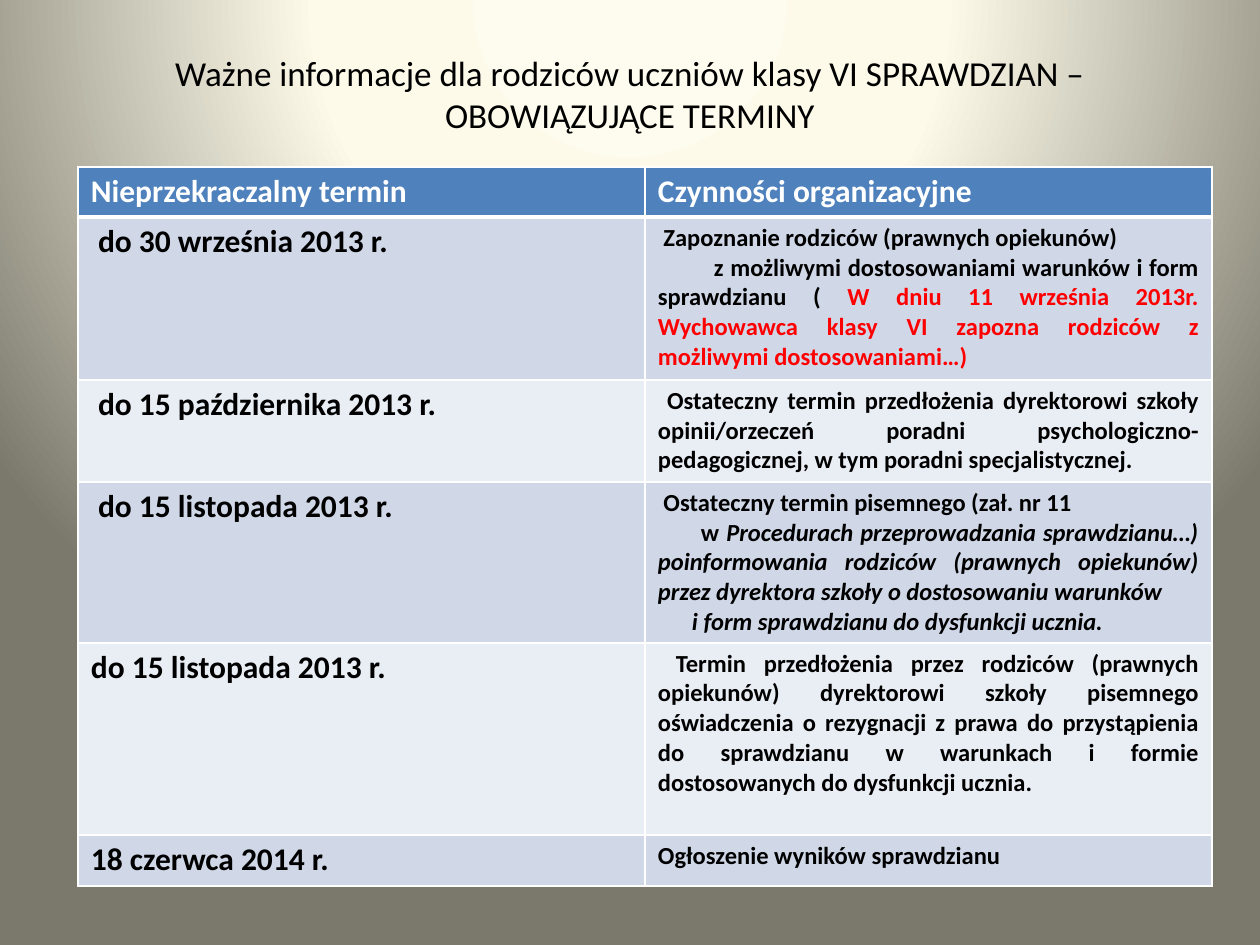
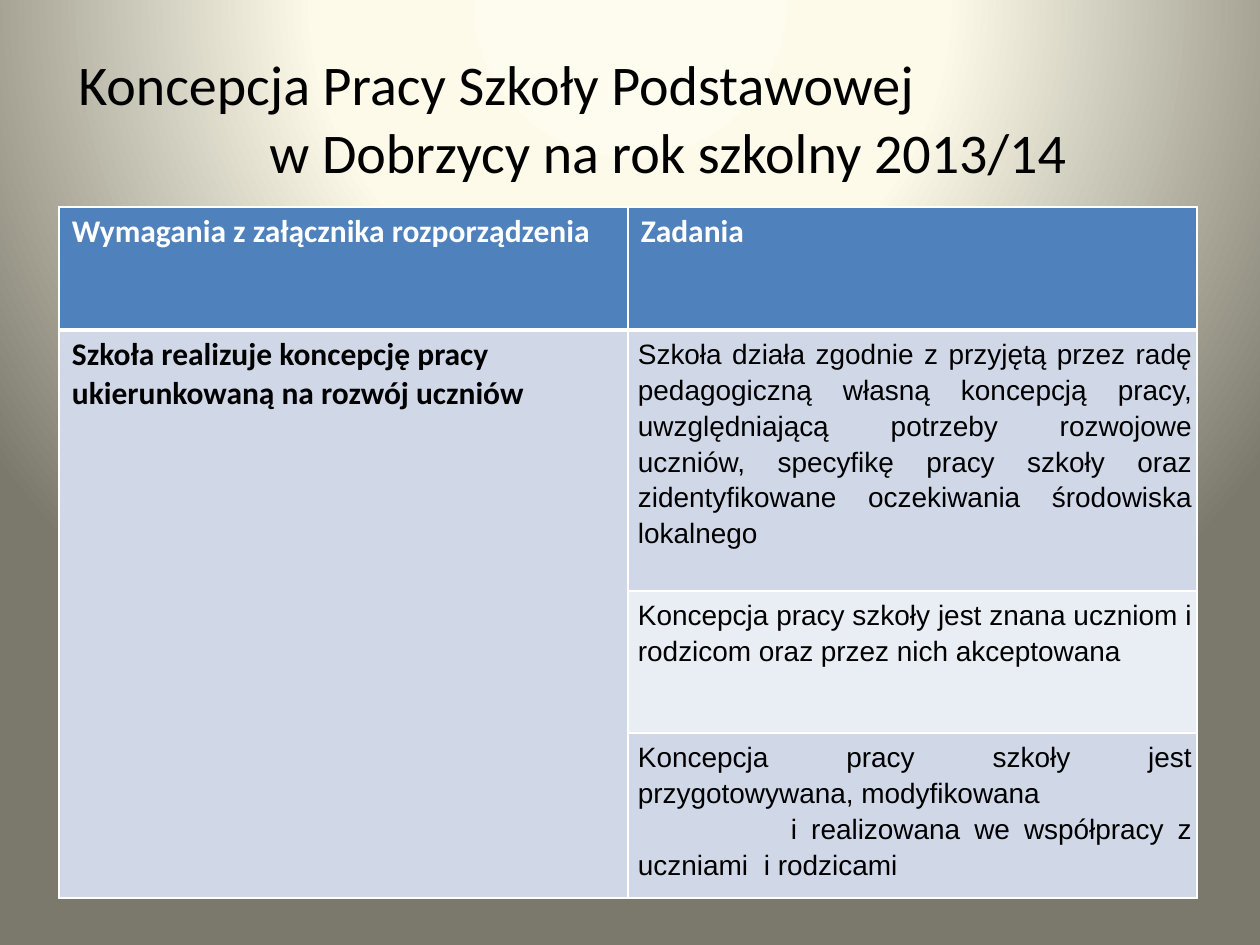
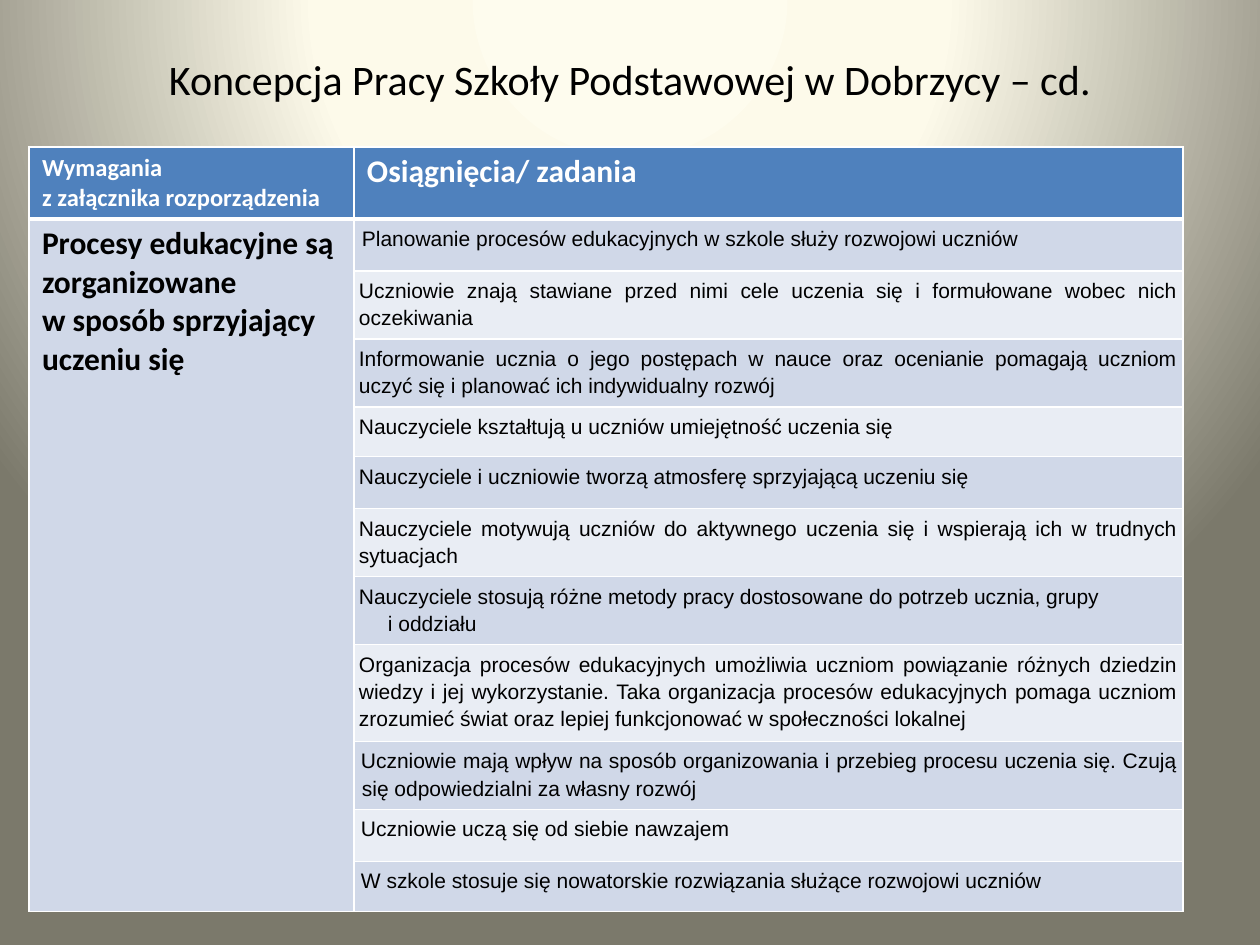
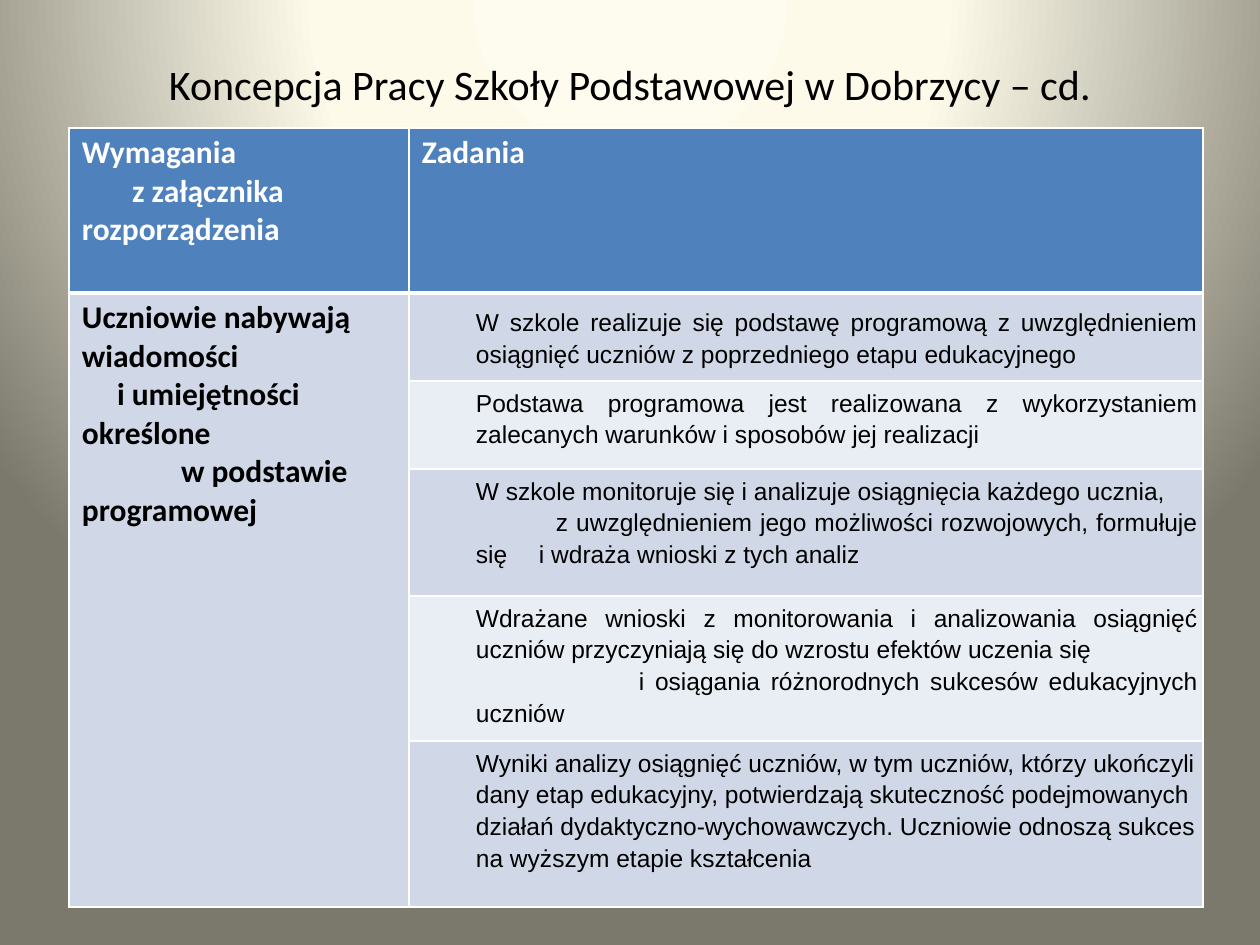
"""Build four slides of school tables on a shared glowing background."""
from dataclasses import dataclass, replace
from itertools import product

from pptx import Presentation
from pptx.dml.color import RGBColor as Color
from pptx.enum.text import MSO_ANCHOR as Anchor, PP_ALIGN as Align
from pptx.oxml import parse_xml
from pptx.oxml.ns import nsdecls, qn
from pptx.util import Emu, Pt

SCALE = 914400 / 126
WIDE, TALL = 1260, 945
BLACK = Color(0x00, 0x00, 0x00)
WHITE = Color(0xFF, 0xFF, 0xFF)
RED = Color(0xFF, 0x00, 0x00)
BLUE = Color(0x4F, 0x81, 0xBD)
DARK = Color(0xD0, 0xD8, 0xE8)
PALE = Color(0xE9, 0xED, 0xF4)
GLOW = ((0, Color(0xFE, 0xFC, 0xEE)), (40, Color(0xFD, 0xFA, 0xEA)),
        (100, Color(0x7B, 0x79, 0x6B)))


@dataclass
class Look:
    """The style of the text in a box or a cell."""
    size: int
    ink: Color = BLACK
    face: str = "Calibri"
    bold: bool = True
    align: Align = Align.LEFT
    space: float = 1.0
    left: int = 0
    inset: tuple = (13, 6)


@dataclass
class Bit:
    """A stretch of text that differs from its paragraph."""
    text: str
    ink: Color = None
    slant: bool = None


@dataclass
class Par:
    """A paragraph with its margin, first line indent and tab stop."""
    bits: object
    lead: int = 0
    left: int = 0
    tab: int = 0


TITLE = Look(24, bold=False, align=Align.CENTER)
HEAD = Look(18, WHITE)
LABEL = Look(18)
DETAIL = Look(14, align=Align.JUSTIFY)
TASK = Look(16, face="Arial", bold=False, align=Align.JUSTIFY, space=1.15,
            inset=(5, 5))


def px(num):
    """Turn px into EMU."""
    return Emu(round(num * SCALE))


def listed(item):
    """Wrap a single item in a list."""
    return item if isinstance(item, list) else [item]


def write(frame, text, look):
    """Fill a text frame with paragraphs in one look."""
    for num, par in enumerate(listed(text)):
        if isinstance(par, str):
            par = Par(par)
        line = frame.add_paragraph() if num else frame.paragraphs[0]
        prop = line._p.get_or_add_pPr()
        prop.set("marL", str(px(look.left + par.left)))
        prop.set("indent", str(px(par.lead)))
        if par.tab:
            prop.append(parse_xml(
                f'<a:tabLst {nsdecls("a")}>'
                f'<a:tab pos="{px(par.tab)}" algn="l"/></a:tabLst>'))
        line.alignment, line.line_spacing = look.align, look.space
        font = line.font
        font.name, font.size, font.bold = look.face, Pt(look.size), look.bold
        font.color.rgb = look.ink
        for bit in listed(par.bits):
            if isinstance(bit, str):
                bit = Bit(bit)
            run = line.add_run()
            run.text = bit.text
            if bit.ink is not None:
                run.font.color.rgb = bit.ink
            if bit.slant:
                run.font.italic = True


def paint(master):
    """Give the master its round gradient."""
    master.background.fill.solid()
    prop = master.element.find(".//" + qn("p:bgPr"))
    stops = "".join(
        f'<a:gs pos="{pos * 1000}"><a:srgbClr val="{ink}"/></a:gs>'
        for pos, ink in GLOW)
    prop.replace(prop[0], parse_xml(
        f'<a:gradFill {nsdecls("a")} rotWithShape="1"><a:gsLst>{stops}'
        '</a:gsLst><a:path path="circle"><a:fillToRect l="50000" t="-80000" '
        'r="50000" b="180000"/></a:path></a:gradFill>'))


def title(slide, text, tall, look=TITLE):
    """Add the slide title."""
    box = slide.shapes.add_textbox(px(63), px(38), px(1134), px(tall))
    frame = box.text_frame
    frame.word_wrap = True
    frame.vertical_anchor = Anchor.MIDDLE
    write(frame, text, look)


def edge(cell, row):
    """Draw white borders, thick under the header."""
    thick = {"T": 3 if row == 1 else 1, "B": 3 if row == 0 else 1}
    prop = cell._tc.get_or_add_tcPr()
    for num, side in enumerate("LRTB"):
        prop.insert(num, parse_xml(
            f'<a:ln{side} {nsdecls("a")} w="{Pt(thick.get(side, 1))}">'
            f'<a:solidFill><a:srgbClr val="{WHITE}"/></a:solidFill>'
            f'</a:ln{side}>'))


def grid(slide, spot, cols, rows, heads, sides, tasks, looks):
    """Add a two-column table; a lone side label spans all its rows."""
    table = slide.shapes.add_table(
        len(rows), 2, *map(px, (*spot, sum(cols), sum(rows)))).table
    for part, wide in zip(table.columns, cols):
        part.width = px(wide)
    for part, tall in zip(table.rows, rows):
        part.height = px(tall)
    for row, col in product(range(len(rows)), range(2)):
        cell = table.cell(row, col)
        cell.fill.solid()
        cell.fill.fore_color.rgb = (
            BLUE if row == 0 else DARK if row % 2 or
            (col == 0 and len(sides) == 1) else PALE)
        edge(cell, row)
    if len(sides) == 1:
        table.cell(1, 0).merge(table.cell(len(rows) - 1, 0))
    for col, texts in enumerate((sides, tasks)):
        for row, text in enumerate([heads[col], *texts]):
            cell = table.cell(row, col)
            look = looks[col] if row else looks[col + 2]
            across, down = map(px, look.inset)
            cell.margin_left = cell.margin_right = across
            cell.margin_top = cell.margin_bottom = down
            write(cell.text_frame, text, look)
    return table


def dates(slide):
    """Fill the slide on test dates."""
    title(slide, "Ważne informacje dla rodziców uczniów klasy VI SPRAWDZIAN – "
          "OBOWIĄZUJĄCE TERMINY", 110, replace(TITLE, size=20))
    sides = [" do 30 września 2013 r.", " do 15 października 2013 r.",
             " do 15 listopada 2013 r.", "do 15 listopada 2013 r.",
             "18 czerwca 2014 r."]
    tasks = [
        [" Zapoznanie rodziców (prawnych opiekunów)",
         Par(["z możliwymi dostosowaniami warunków i form sprawdzianu ( ",
              Bit("W dniu 11 września 2013r. Wychowawca klasy VI zapozna "
                  "rodziców z możliwymi dostosowaniami…)", RED)], 56)],
        " Ostateczny termin przedłożenia dyrektorowi szkoły opinii/orzeczeń "
        "poradni psychologiczno-pedagogicznej, w tym poradni "
        "specjalistycznej.",
        [" Ostateczny termin pisemnego (zał. nr 11",
         Par(["w ", Bit("Procedurach przeprowadzania sprawdzianu…) "
                        "poinformowania rodziców (prawnych opiekunów) przez "
                        "dyrektora szkoły o dostosowaniu warunków",
                        slant=True)], 43),
         Par(Bit("i form sprawdzianu do dysfunkcji ucznia.", slant=True), 34)],
        " Termin przedłożenia przez rodziców (prawnych opiekunów) dyrektorowi "
        "szkoły pisemnego oświadczenia o rezygnacji z prawa do przystąpienia "
        "do sprawdzianu w warunkach i formie dostosowanych do dysfunkcji "
        "ucznia.",
        "Ogłoszenie wyników sprawdzianu"]
    grid(slide, (78, 167), (567, 567), (50, 163, 102, 161, 192, 51),
         ("Nieprzekraczalny termin", "Czynności organizacyjne"),
         sides, tasks, (LABEL, DETAIL, HEAD, HEAD))


def plan(slide):
    """Fill the slide on the school plan."""
    title(slide, [Par("Koncepcja Pracy Szkoły Podstawowej", 3),
                  Par("w Dobrzycy na rok szkolny 2013/14", 194)],
          158, replace(TITLE, size=32, align=Align.LEFT))
    sides = ["Szkoła realizuje koncepcję pracy ukierunkowaną na rozwój uczniów"]
    tasks = [
        "Szkoła działa zgodnie z przyjętą przez radę pedagogiczną własną "
        "koncepcją pracy, uwzględniającą potrzeby rozwojowe uczniów, "
        "specyfikę pracy szkoły oraz zidentyfikowane oczekiwania środowiska "
        "lokalnego",
        "Koncepcja pracy szkoły jest znana uczniom i rodzicom oraz przez nich "
        "akceptowana",
        ["Koncepcja pracy szkoły jest przygotowywana, modyfikowana",
         Par("i realizowana we współpracy z uczniami\ti rodzicami", 153,
             tab=264)]]
    grid(slide, (59, 207), (569, 569), (123, 261, 142, 165),
         ("Wymagania z załącznika rozporządzenia", "Zadania"),
         sides, tasks, (LABEL, replace(TASK, left=5), HEAD, HEAD))


def learn(slide):
    """Fill the slide on the learning process."""
    title(slide, "Koncepcja Pracy Szkoły Podstawowej w Dobrzycy – cd.", 81)
    sides = [["Procesy edukacyjne są zorganizowane",
              "w sposób sprzyjający uczeniu się"]]
    tasks = [
        Par("Planowanie procesów edukacyjnych w szkole służy rozwojowi "
            "uczniów", left=3),
        "Uczniowie znają stawiane przed nimi cele uczenia się i formułowane "
        "wobec nich oczekiwania",
        "Informowanie ucznia o jego postępach w nauce oraz ocenianie pomagają "
        "uczniom uczyć się i planować ich indywidualny rozwój",
        "Nauczyciele kształtują u uczniów umiejętność uczenia się",
        "Nauczyciele i uczniowie tworzą atmosferę sprzyjającą uczeniu się",
        "Nauczyciele motywują uczniów do aktywnego uczenia się i wspierają "
        "ich w trudnych sytuacjach",
        ["Nauczyciele stosują różne metody pracy dostosowane do potrzeb "
         "ucznia, grupy", Par("i oddziału", 29)],
        "Organizacja procesów edukacyjnych umożliwia uczniom powiązanie "
        "różnych dziedzin wiedzy i jej wykorzystanie. Taka organizacja "
        "procesów edukacyjnych pomaga uczniom zrozumieć świat oraz lepiej "
        "funkcjonować w społeczności lokalnej",
        Par("Uczniowie mają wpływ na sposób organizowania i przebieg procesu "
            "uczenia się. Czują się odpowiedzialni za własny rozwój", -1, 3),
        Par("Uczniowie uczą się od siebie nawzajem", -1, 3),
        Par("W szkole stosuje się nowatorskie rozwiązania służące rozwojowi "
            "uczniów", -1, 3)]
    grid(slide, (29, 147), (325, 829),
         (72, 52, 64, 64, 50, 52, 65, 63, 92, 63, 52, 50),
         (["Wymagania", "z załącznika rozporządzenia"],
          "Osiągnięcia/ zadania"),
         sides, tasks,
         (LABEL, replace(TASK, size=12), replace(HEAD, size=14), HEAD))


def skills(slide):
    """Fill the slide on knowledge and skills."""
    title(slide, "Koncepcja Pracy Szkoły Podstawowej w Dobrzycy – cd.", 91)
    sides = [["Uczniowie nabywają wiadomości",
              Par("i umiejętności określone", 35),
              Par("w podstawie programowej", 99)]]
    tasks = [
        "W szkole realizuje się podstawę programową z uwzględnieniem "
        "osiągnięć uczniów z poprzedniego etapu edukacyjnego",
        "Podstawa programowa jest realizowana z wykorzystaniem zalecanych "
        "warunków i sposobów jej realizacji",
        ["W szkole monitoruje się i analizuje osiągnięcia każdego ucznia,",
         Par("z uwzględnieniem jego możliwości rozwojowych, formułuje się\t"
             "i wdraża wnioski z tych analiz", 80, tab=147)],
        ["Wdrażane wnioski z monitorowania i analizowania osiągnięć uczniów "
         "przyczyniają się do wzrostu efektów uczenia się",
         Par("i osiągania różnorodnych sukcesów edukacyjnych uczniów", 163)],
        ["Wyniki analizy osiągnięć uczniów, w tym uczniów, którzy ukończyli",
         "dany etap edukacyjny, potwierdzają skuteczność podejmowanych",
         "działań dydaktyczno-wychowawczych. Uczniowie odnoszą sukces",
         "na wyższym etapie kształcenia"]]
    table = grid(
        slide, (69, 128), (340, 794), (165, 88, 88, 127, 137, 166),
        (["Wymagania", Par("z załącznika rozporządzenia", 50)], "Zadania"),
        sides, tasks, (LABEL, replace(TASK, size=14, left=62), HEAD, HEAD))
    table.cell(1, 1).vertical_anchor = Anchor.MIDDLE


def main():
    """Build and save the deck."""
    deck = Presentation()
    deck.slide_width, deck.slide_height = px(WIDE), px(TALL)
    paint(deck.slide_master)
    for fill in (dates, plan, learn, skills):
        fill(deck.slides.add_slide(deck.slide_layouts[6]))
    deck.save("out.pptx")


if __name__ == "__main__":
    main()
